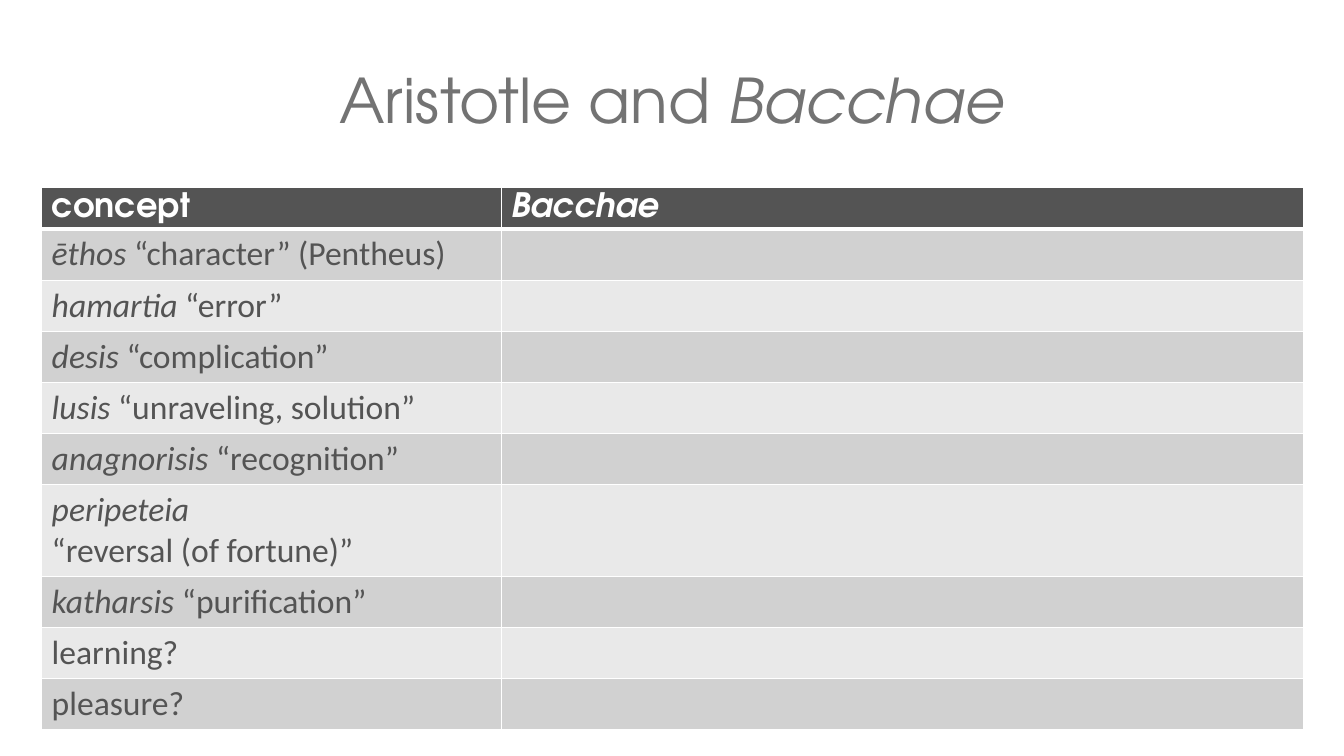
from lxml import etree
from pptx import Presentation
from pptx.dml.color import RGBColor
from pptx.enum.text import MSO_ANCHOR, PP_ALIGN
from pptx.oxml.ns import qn
from pptx.util import Cm, Pt

MIDDLE = MSO_ANCHOR.MIDDLE
CENTER = PP_ALIGN.CENTER

COLORS = {
    "title": "737373",
    "header": "545454",
    "text": "545454",
    "band_dark": "D1D1D1",
    "band_light": "E9E9E9",
    "white": "FFFFFF",
}
DISPLAY, BODY = "TeX Gyre Adventor", "Calibri"

CONCEPTS = [
    ("ēthos", " “character” (Pentheus)"),
    ("hamartia", " “error”"),
    ("desis", " “complication”"),
    ("lusis", " “unraveling, solution”"),
    ("anagnorisis", " “recognition”"),
    ("peripeteia", "\n“reversal (of fortune)”"),
    ("katharsis", " “purification”"),
    ("", "learning?"),
    ("", "pleasure?"),
]


def write(p, text, font=BODY, size=24, color="text", bold=False, italic=False):
    """Add one formatted run; a leading newline becomes a line break."""
    if text.startswith("\n"):
        p.add_line_break()
    r = p.add_run()
    r.text = text.strip("\n")
    r.font.name = font
    r.font.size = Pt(size)
    r.font.bold = bold
    r.font.italic = italic
    r.font.color.rgb = RGBColor.from_string(COLORS[color])


def format_cell(cell, fill, bottom=1):
    """Fill the cell and give it white borders, the bottom one in points."""
    cell.fill.solid()
    cell.fill.fore_color.rgb = RGBColor.from_string(COLORS[fill])
    tcPr = cell._tc.get_or_add_tcPr()
    widths = {"a:lnL": 1, "a:lnR": 1, "a:lnT": 1, "a:lnB": bottom}
    for i, (tag, width) in enumerate(widths.items()):
        ln = etree.Element(qn(tag), w=str(Pt(width)))
        solid = etree.SubElement(ln, qn("a:solidFill"))
        etree.SubElement(solid, qn("a:srgbClr"), val=COLORS["white"])
        tcPr.insert(i, ln)


prs = Presentation()
prs.slide_width, prs.slide_height = Cm(33.87), Cm(19.05)
s = prs.slides.add_slide(prs.slide_layouts[5])

# Title
title = s.shapes.title
title.left, title.top, title.width, title.height = Cm(3.39), Cm(0.76), Cm(27.09), Cm(3.68)
tf = title.text_frame
tf.word_wrap = True
tf.vertical_anchor = MIDDLE
p = tf.paragraphs[0]
p.alignment = CENTER
p.line_spacing = 0.9
write(p, "Aristotle and ", font=DISPLAY, size=44, color="title")
write(p, "Bacchae", font=DISPLAY, size=44, color="title", italic=True)

# Table
frame = s.shapes.add_table(len(CONCEPTS) + 1, 2, Cm(1.05), Cm(4.73), Cm(31.8), Cm(10.4))
table = frame.table
table.columns[0].width, table.columns[1].width = Cm(11.58), Cm(20.22)
for row in table.rows:
    row.height = Cm(1.04)

for cell, heading in zip(table.rows[0].cells, ("concept", "Bacchae")):
    format_cell(cell, "header", bottom=3)
    write(cell.text_frame.paragraphs[0], heading, font=DISPLAY, color="white",
          bold=True, italic=heading == "Bacchae")

for i, (term, meaning) in enumerate(CONCEPTS, start=1):
    for cell in table.rows[i].cells:
        format_cell(cell, "band_dark" if i % 2 else "band_light")
    p = table.cell(i, 0).text_frame.paragraphs[0]
    if term:
        write(p, term, italic=True)
    write(p, meaning)

prs.save("out.pptx")
